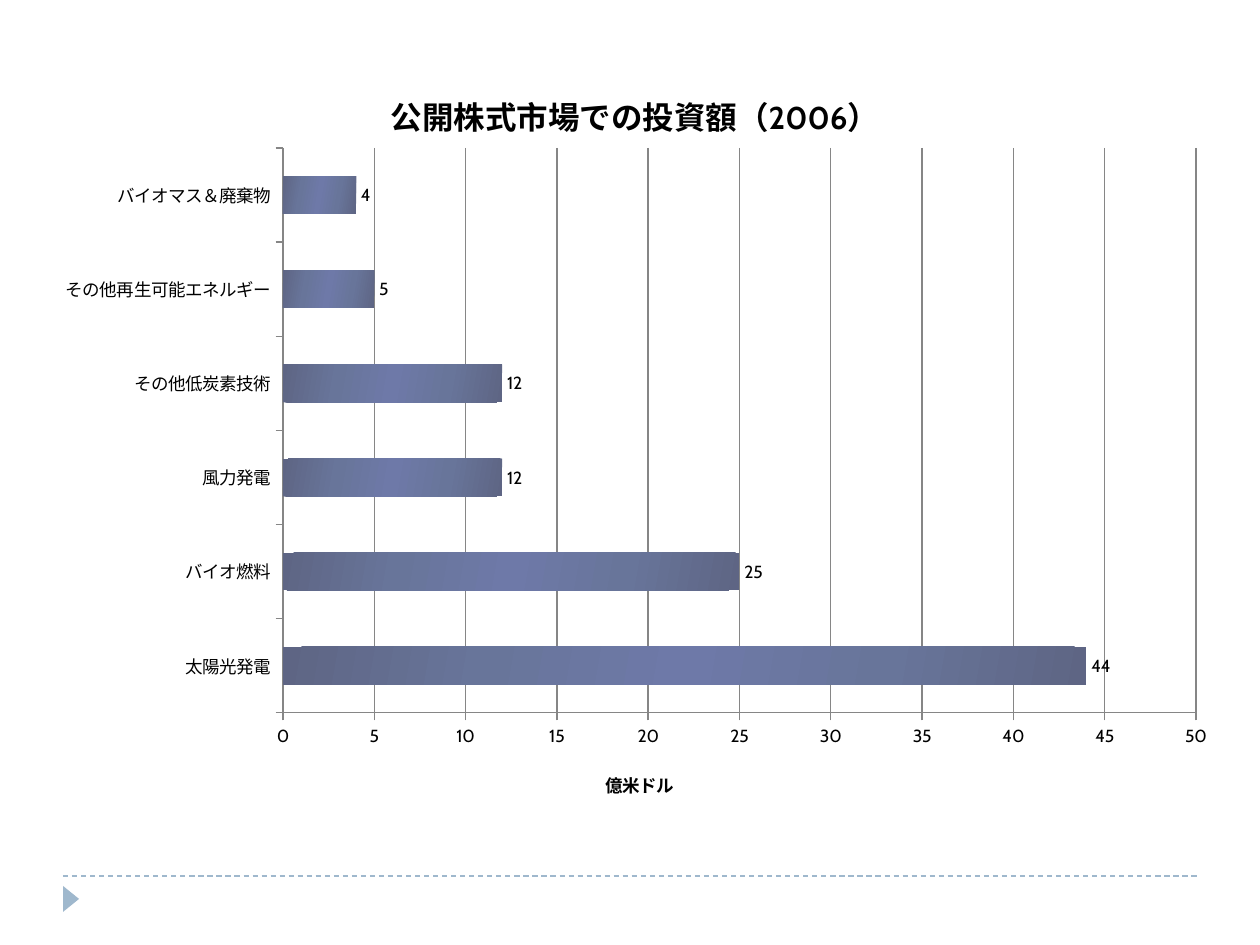
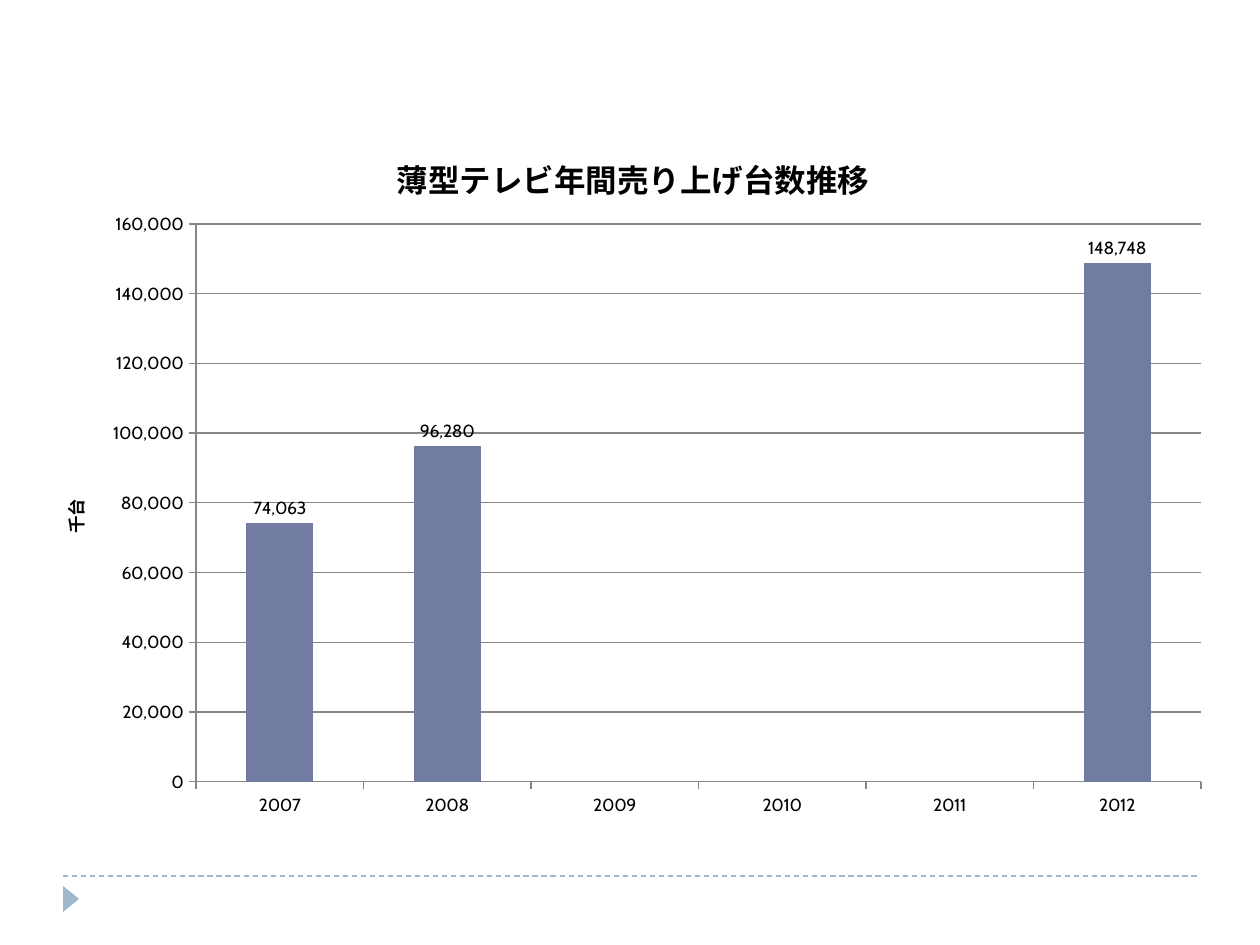
from dataclasses import dataclass

from lxml import etree
from pptx import Presentation
from pptx import util as u
from pptx.chart.data import CategoryChartData
from pptx.dml.color import RGBColor as Rgb
from pptx.enum import chart as ch
from pptx.enum import dml, shapes
from pptx.oxml import ns

PX = 914400 // 126


@dataclass(frozen=True)
class Theme:
    font: str = "Cabin"
    head: int = 18
    body: int = 10
    ink: str = "000000"
    bar: str = "727CA3"
    grid: str = "868686"
    mark: str = "9FB8CD"
    shade: tuple = ((0, "5E6584"), (25, "68759A"), (50, "6E79A8"),
                    (75, "68759A"), (100, "5E6584"))


THEME = Theme()


def px(*vals):
    return [u.Emu(v * PX) for v in vals]


def add(node, tag, **attrs):
    return etree.SubElement(node, ns.qn(tag), {k: str(v) for k, v in attrs.items()})


def style(font, size=THEME.body, bold=False):
    font.name, font.size, font.bold = THEME.font, u.Pt(size), bold
    font.color.rgb = Rgb.from_string(THEME.ink)


def rule(line, color):
    line.color.rgb = Rgb.from_string(color)
    line.width = u.Pt(0.75)


def place(node, frame, spot, index):
    """Fix a chart part at slide position spot (x, y and maybe w, h)."""
    for old in node.findall(ns.qn("c:layout")):
        node.remove(old)
    layout = node.makeelement(ns.qn("c:layout"), {})
    node.insert(index, layout)
    man = add(layout, "c:manualLayout")
    if len(spot) == 4:
        add(man, "c:layoutTarget", val="inner")
    for key in ("xMode", "yMode"):
        add(man, "c:" + key, val="edge")
    left, top, wide, high = frame
    parts = [(spot[0] - left) / wide, (spot[1] - top) / high]
    if len(spot) == 4:
        parts += [spot[2] / wide, spot[3] / high]
    for key, part in zip("xywh", parts):
        add(man, "c:" + key, val=round(part, 4))


def label(title, words, size, frame, spot):
    """Fill and place a chart title or axis title."""
    run = title.text_frame.paragraphs[0].add_run()
    run.text = words
    style(run.font, size, True)
    place(title._element, frame, spot, 1)


def footer(slide):
    line = slide.shapes.add_connector(shapes.MSO_CONNECTOR.STRAIGHT, *px(63, 876, 1197, 876))
    rule(line.line, THEME.mark)
    line.line.dash_style = dml.MSO_LINE.DASH
    add(line._element.spPr, "a:effectLst")
    mark = slide.shapes.add_shape(shapes.MSO_SHAPE.ISOSCELES_TRIANGLE, *px(58, 891, 26, 16))
    mark.rotation = 90
    mark.shadow.inherit = False
    mark.fill.solid()
    mark.fill.fore_color.rgb = Rgb.from_string(THEME.mark)
    mark.line.fill.background()


def shade(fill):
    fill.gradient()
    fill.gradient_angle = 350
    stops = fill._fill._gradFill.find(ns.qn("a:gsLst"))
    for old in list(stops):
        stops.remove(old)
    for pos, color in THEME.shade:
        add(add(stops, "a:gs", pos=pos * 1000), "a:srgbClr", val=color)


def bars(slide, kind, frame, plot, cats, vals, top, step, form):
    """Add a bar chart of one series and return it."""
    data = CategoryChartData(number_format=form)
    data.categories = cats
    data.add_series("Series 1", vals)
    chart = slide.shapes.add_chart(kind, *px(*frame), data).chart
    style(chart.font)
    chart.has_legend = False
    place(chart._chartSpace.chart.plotArea, frame, plot, 0)
    for axis in (chart.category_axis, chart.value_axis):
        rule(axis.format.line, THEME.grid)
        axis.major_tick_mark = ch.XL_TICK_MARK.OUTSIDE
        axis.minor_tick_mark = ch.XL_TICK_MARK.NONE
    chart.category_axis.has_major_gridlines = False
    axis = chart.value_axis
    axis.has_major_gridlines = True
    rule(axis.major_gridlines.format.line, THEME.grid)
    axis.minimum_scale, axis.maximum_scale, axis.major_unit = 0, top, step
    axis.tick_labels.number_format = form
    axis.tick_labels.number_format_is_linked = False
    group = chart.plots[0]
    group.gap_width, group.vary_by_categories = 150, False
    fill = group.series[0].format.fill
    fill.solid()
    fill.fore_color.rgb = Rgb.from_string(THEME.bar)
    group.has_data_labels = True
    tags = group.data_labels
    tags.show_value = True
    tags.number_format, tags.number_format_is_linked = form, False
    tags.position = ch.XL_LABEL_POSITION.OUTSIDE_END
    style(tags.font)
    return chart


def market(slide):
    frame = (42, 53, 1189, 766)
    cats = ["太陽光発電", "バイオ燃料", "風力発電", "その他低炭素技術",
            "その他再生可能エネルギー", "バイオマス＆廃棄物"]
    chart = bars(slide, ch.XL_CHART_TYPE.BAR_CLUSTERED, frame, (283, 148, 913, 565),
                 cats, [44, 25, 12, 12, 5, 4], 50, 5, "General")
    shade(chart.plots[0].series[0].format.fill)
    label(chart.chart_title, "公開株式市場での投資額（2006）", THEME.head, frame, (385, 83))
    label(chart.value_axis.axis_title, "億米ドル", THEME.body, frame, (602, 768))


def sales(slide):
    frame = (32, 113, 1193, 716)
    cats = [str(year) for year in range(2007, 2013)]
    chart = bars(slide, ch.XL_CHART_TYPE.COLUMN_CLUSTERED, frame, (196, 224, 1005, 558),
                 cats, [74063, 96280, None, None, None, 148748], 160000, 20000, "#,##0")
    label(chart.chart_title, "薄型テレビ年間売り上げ台数推移", THEME.head, frame, (391, 146))
    title = chart.value_axis.axis_title
    label(title, "千台", THEME.body, frame, (59, 496))
    body = title._element.find(".//" + ns.qn("a:bodyPr"))
    body.set("rot", "-5400000")
    body.set("vert", "horz")


def main():
    deck = Presentation()
    deck.slide_width, deck.slide_height = u.Inches(10), u.Inches(7.5)
    for draw in (market, sales):
        slide = deck.slides.add_slide(deck.slide_layouts[6])
        footer(slide)
        draw(slide)
    deck.save("out.pptx")


if __name__ == "__main__":
    main()
